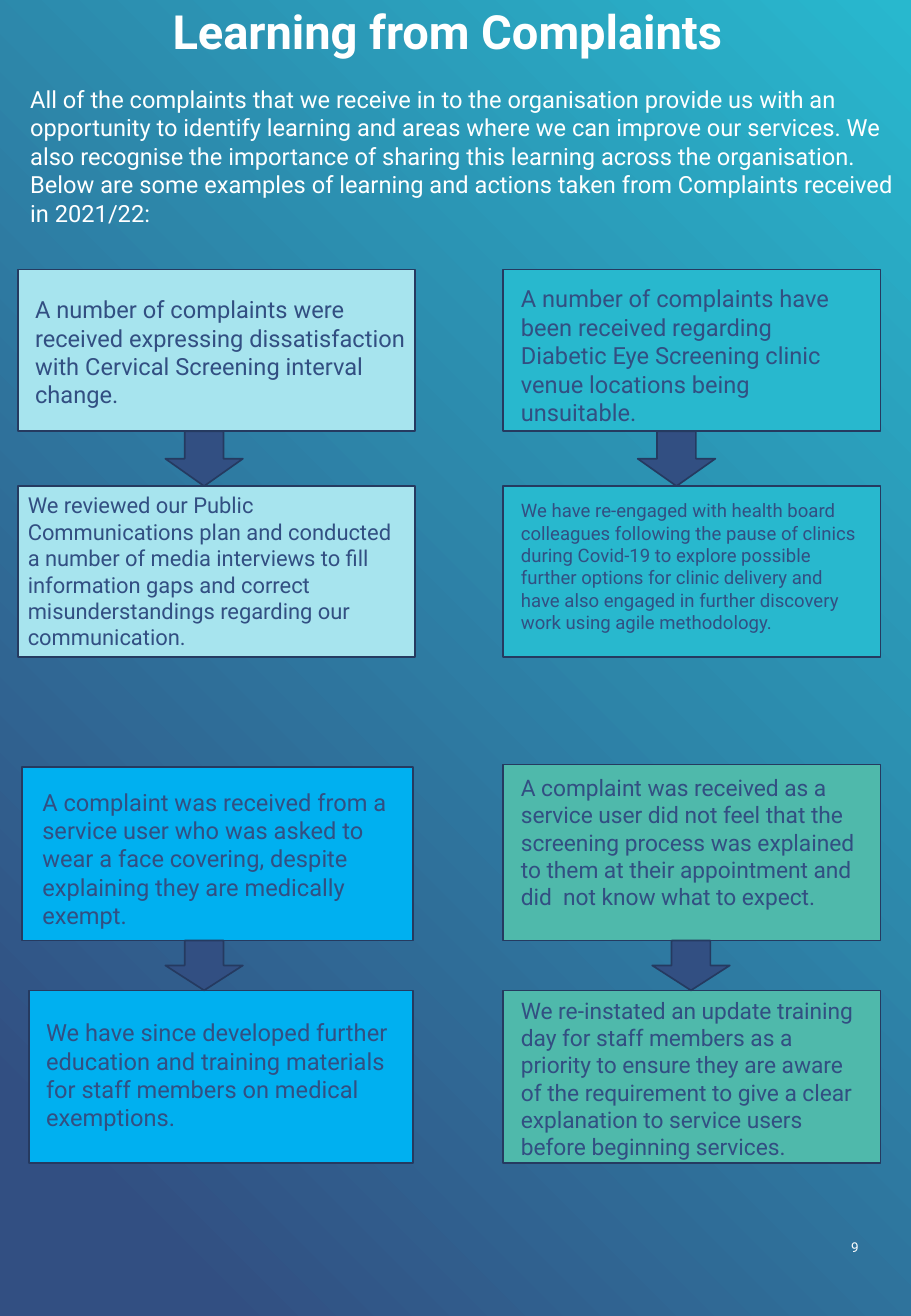
import pptx
import pptx.dml.color
import pptx.enum.shapes
import pptx.enum.text
import pptx.util

Pt = pptx.util.Pt
SHAPES = pptx.enum.shapes.MSO_SHAPE
ANCHOR = pptx.enum.text.MSO_ANCHOR
ALIGN = pptx.enum.text.PP_ALIGN
AUTO_SIZE = pptx.enum.text.MSO_AUTO_SIZE

FONT = "Roboto"
COLOURS = {
    "navy": "324F82",
    "outline": "253A60",
    "teal": "28B8CE",
    "pale": "A7E4EE",
    "green": "4FB9AB",
    "blue": "00B0F0",
    "white": "FFFFFF",
}
ARROW_WIDTH = 46

INTRO = (
    "All of the complaints that we receive in to the organisation provide us with an "
    "opportunity to identify learning and areas where we can improve our services. We also "
    "recognise the importance of sharing this learning across the organisation. Below are some "
    "examples of learning and actions taken from Complaints received in 2021/22:"
)

EXAMPLES = [
    {
        "fill": "pale",
        "arrow_left": 98,
        "complaint": (10.8, 159.8, 235.4, 95.8),
        "complaint_text": (
            "A number of complaints were received expressing dissatisfaction with Cervical "
            "Screening interval change.", (13.7, 171.4, 235.4, 74.9), 14),
        "action": (10.8, 288, 235.4, 101.5),
        "action_text": (
            "We reviewed our Public Communications plan and conducted a number of media "
            "interviews to fill information gaps and correct misunderstandings regarding our "
            "communication.", (9.4, 288, 235.4, 101.5), 13),
    },
    {
        "fill": "teal",
        "arrow_left": 378,
        "complaint": (298, 159.8, 224, 95.8),
        "complaint_text": (
            "A number of complaints have been received regarding Diabetic Eye Screening clinic "
            "venue locations being unsuitable.", (301.7, 164.9, 216, 92.2), 14),
        "action": (298, 288, 224, 101.5),
        "action_text": (
            "We have re-engaged with health board colleagues following the pause of clinics "
            "during Covid-19 to explore possible further options for clinic delivery and have "
            "also engaged in further discovery work using agile methodology.",
            (301.7, 292.3, 216, 87.1), 11),
    },
    {
        "fill": "blue",
        "arrow_left": 98,
        "complaint": (13, 454.3, 231.8, 103),
        "complaint_text": (
            "A complaint was received from a service user who was asked to wear a face covering, "
            "despite explaining they are medically exempt.", (18, 463, 221, 92.2), 14),
        "action": (17.3, 586.8, 227.5, 102.2),
        "action_text": (
            "We have since developed further education and training materials for staff members "
            "on medical exemptions.", (20.2, 599.8, 218.2, 74.9), 14),
    },
    {
        "fill": "green",
        "arrow_left": 386.6,
        "complaint": (298, 452.9, 224, 104.4),
        "complaint_text": (
            "A complaint was received as a service user did not feel that the  screening process "
            "was explained to them at their appointment and did  not know what to expect.",
            (301.7, 455, 220.3, 92.2), 13.5),
        "action": (298, 586.8, 224, 102.2),
        "action_text": (
            "We re-instated an update training day for staff members as a priority to ensure "
            "they are aware of the requirement to give a clear explanation to service users "
            "before beginning services.", (301.7, 586.8, 216, 105.1), 13.5),
    },
]


def colour(name):
    return pptx.dml.color.RGBColor.from_string(COLOURS[name])


def write_text(frame, text, size, ink="navy", bold=False):
    frame.word_wrap = True
    para = frame.paragraphs[0]
    span = para.add_run()
    span.text = text
    span.font.name = FONT
    span.font.size = Pt(size)
    span.font.bold = bold
    span.font.color.rgb = colour(ink)
    return para


def add_text(page, text, place, size, ink="navy"):
    box = page.shapes.add_textbox(*map(Pt, place))
    write_text(box.text_frame, text, size, ink)
    box.text_frame.auto_size = AUTO_SIZE.SHAPE_TO_FIT_TEXT


def add_block(page, kind, place, fill):
    block = page.shapes.add_shape(kind, *map(Pt, place))
    block.shadow.inherit = False
    block.fill.solid()
    block.fill.fore_color.rgb = colour(fill)
    block.line.color.rgb = colour("outline")
    block.line.width = Pt(1)


def add_title(page, text):
    title = page.shapes.title
    title.left, title.top, title.width, title.height = map(Pt, (33, 1, 464.4, 39))
    frame = title.text_frame
    frame.margin_left = frame.margin_top = frame.margin_right = frame.margin_bottom = 0
    frame.vertical_anchor = ANCHOR.MIDDLE
    frame.auto_size = AUTO_SIZE.NONE
    para = write_text(frame, text, 27.9, "white", bold=True)
    para.alignment = ALIGN.CENTER
    para.line_spacing = 0.9


def add_example(page, example):
    complaint, action = example["complaint"], example["action"]
    arrow_top = complaint[1] + complaint[3]
    arrow = (example["arrow_left"], arrow_top, ARROW_WIDTH, action[1] - arrow_top)
    add_block(page, SHAPES.RECTANGLE, complaint, example["fill"])
    add_block(page, SHAPES.RECTANGLE, action, example["fill"])
    add_block(page, SHAPES.DOWN_ARROW, arrow, "navy")
    add_text(page, *example["complaint_text"])
    add_text(page, *example["action_text"])


def paint_background(page):
    fill = page.background.fill
    fill.gradient()
    fill.gradient_angle = 45
    for stop, position, name in zip(fill.gradient_stops, (0.1, 1), ("navy", "teal")):
        stop.position = position
        stop.color.rgb = colour(name)


def main():
    deck = pptx.Presentation()
    deck.slide_width, deck.slide_height = Pt(540), Pt(779.76)
    page = deck.slides.add_slide(deck.slide_layouts[5])
    paint_background(page)
    add_title(page, "Learning from Complaints")
    add_text(page, INTRO, (10.8, 46.8, 529.2, 92.2), 14, "white")
    for example in EXAMPLES:
        add_example(page, example)
    add_text(page, "9", (497.5, 730.8, 24.5, 17.3), 8, "white")
    deck.save("out.pptx")


if __name__ == "__main__":
    main()
